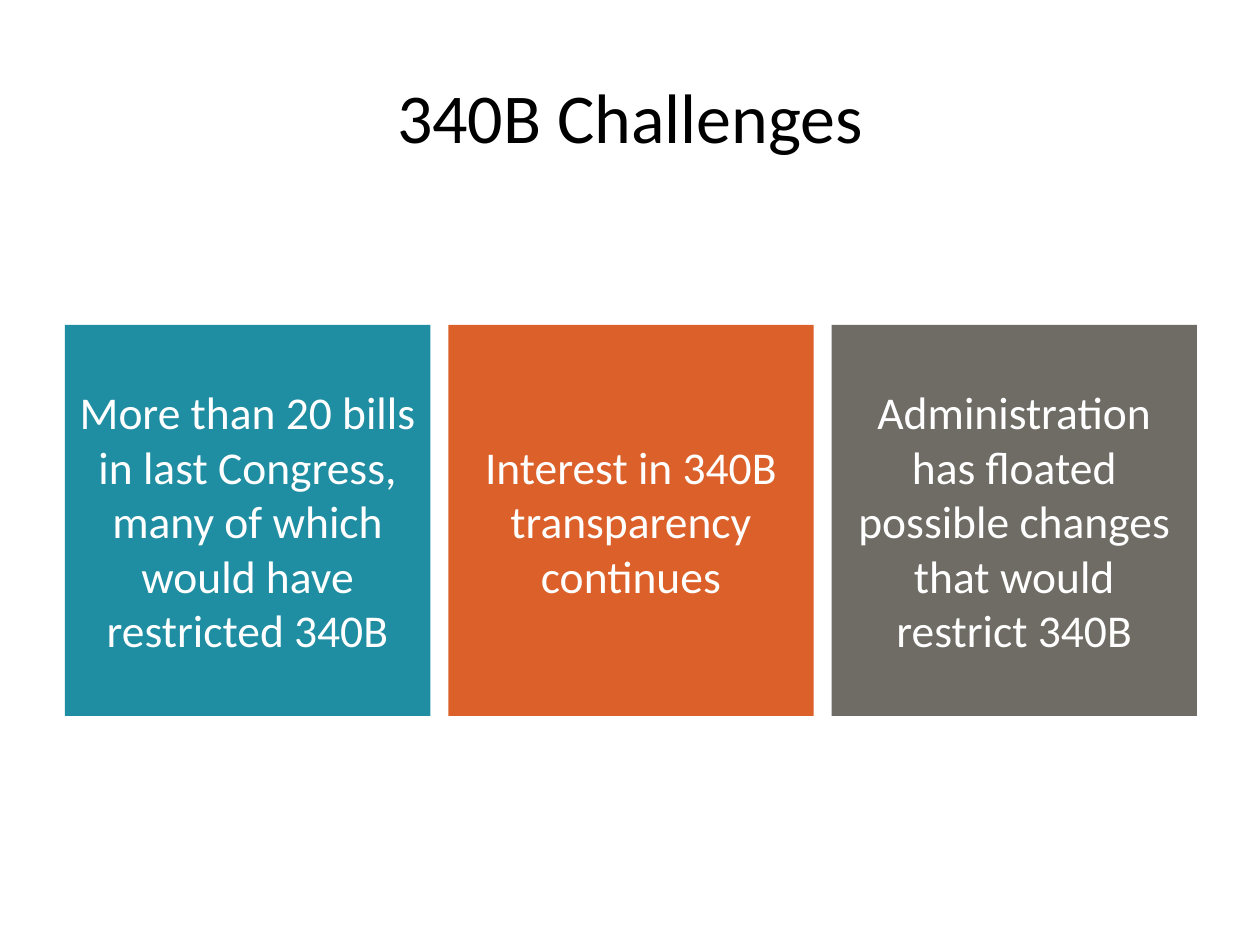
from dataclasses import dataclass

from pptx import Presentation
from pptx.dml.color import RGBColor
from pptx.enum.shapes import MSO_SHAPE
from pptx.enum.text import MSO_ANCHOR, PP_ALIGN
from pptx.util import Emu, Pt

PIXELS_PER_INCH = 126


@dataclass(frozen=True)
class Theme:
    font: str = "Calibri"
    title_size: int = 40
    card_size: int = 26
    title_color: str = "000000"
    card_text: str = "FFFFFF"
    teal: str = "208EA2"
    orange: str = "DC6029"
    gray: str = "6F6C65"


THEME = Theme()

CHALLENGES = [
    ("More than 20 bills in last Congress, many of which would have restricted 340B", THEME.teal),
    ("Interest in 340B transparency continues", THEME.orange),
    ("Administration has floated possible changes that would restrict 340B", THEME.gray),
]


def px(length):
    return Emu(round(length * 914400 / PIXELS_PER_INCH))


def write_centered(shape, text, size, color, inset):
    frame = shape.text_frame
    frame.word_wrap = True
    frame.vertical_anchor = MSO_ANCHOR.MIDDLE
    frame.margin_left = frame.margin_right = px(inset)
    frame.margin_top = frame.margin_bottom = px(inset)
    paragraph = frame.paragraphs[0]
    paragraph.alignment = PP_ALIGN.CENTER
    run = paragraph.add_run()
    run.text = text
    run.font.name = THEME.font
    run.font.size = Pt(size)
    run.font.color.rgb = RGBColor.from_string(color)


def add_title(slide, box, text):
    shape = slide.shapes.add_textbox(*map(px, box))
    write_centered(shape, text, THEME.title_size, THEME.title_color, inset=6)


def add_cards(slide, box, cards, gap):
    left, top, width, height = box
    card_width = (width - gap * (len(cards) - 1)) / len(cards)
    for index, (text, color) in enumerate(cards):
        card_left = left + index * (card_width + gap)
        shape = slide.shapes.add_shape(
            MSO_SHAPE.RECTANGLE, px(card_left), px(top), px(card_width), px(height)
        )
        shape.shadow.inherit = False
        shape.fill.solid()
        shape.fill.fore_color.rgb = RGBColor.from_string(color)
        shape.line.fill.background()
        write_centered(shape, text, THEME.card_size, THEME.card_text, inset=12)


def main():
    presentation = Presentation()
    presentation.slide_width = px(1260)
    presentation.slide_height = px(945)
    slide = presentation.slides.add_slide(presentation.slide_layouts[6])
    add_title(slide, (63, 42, 1134, 147), "340B Challenges")
    add_cards(slide, (65, 325, 1132, 391), CHALLENGES, gap=18)
    presentation.save("out.pptx")


if __name__ == "__main__":
    main()
